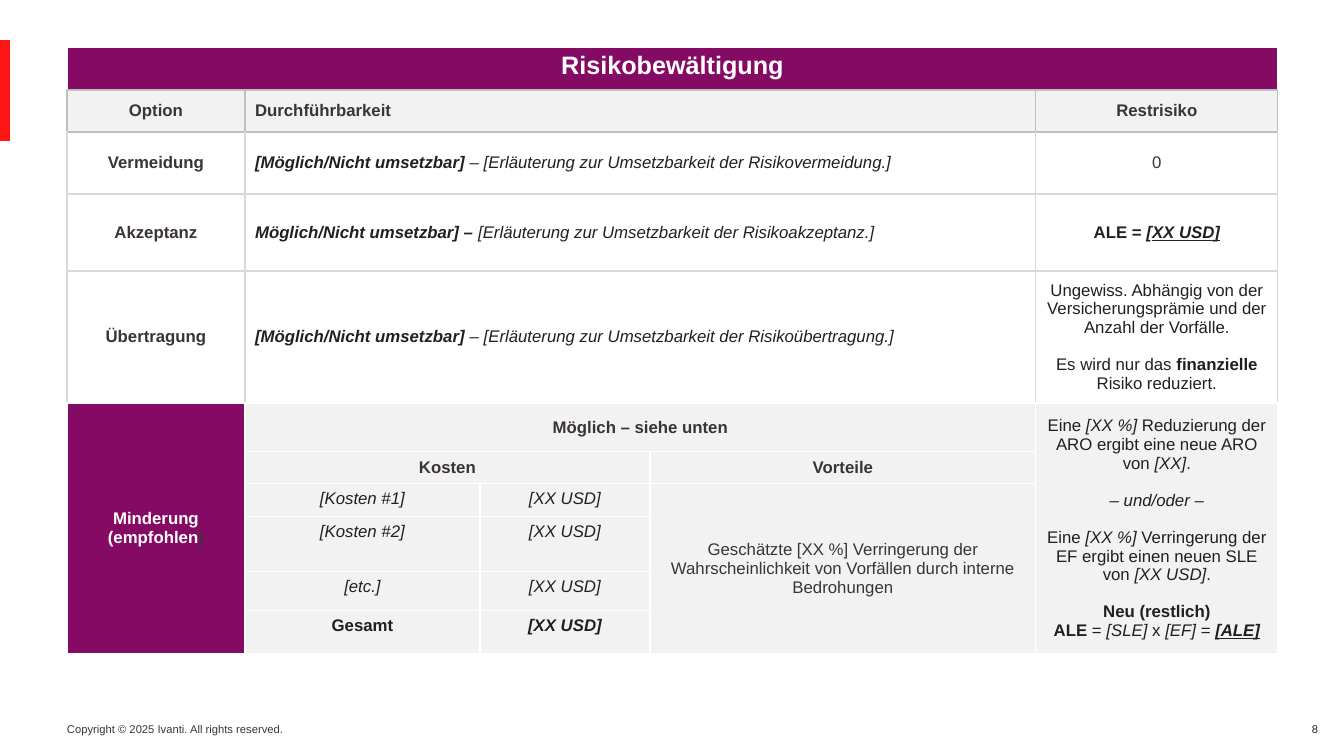
from lxml.etree import SubElement
from pptx import Presentation
from pptx.dml.color import RGBColor
from pptx.enum.shapes import MSO_SHAPE
from pptx.enum.text import MSO_ANCHOR, PP_ALIGN
from pptx.oxml.ns import qn
from pptx.util import Emu, Pt

PLUM, PALE, WHITE, RED = "850A64", "F2F2F2", "FFFFFF", "FF1515"
GREY, INK, MID, SOFT = "3B3436", "231F20", "BFBFBF", "D9D9D9"
COLS = [178, 235, 170, 386, 242]
ROWS = [43, 42, 62, 77, 132, 49, 32, 33, 55, 39, 43]
SIDES = [WHITE, MID] + [SOFT] * 3 + [WHITE] * 6
EDGES = [WHITE, MID, MID, SOFT, SOFT] + [WHITE] * 7
FILLS = [PLUM, PALE] + [WHITE] * 3 + [PALE] * 6
GAP = 13

COST = [("i", "[XX USD]")]
CUT = [
    (0, [("", "Eine "), ("i", "[XX %]"), ("", " Reduzierung der ARO ergibt eine neue ARO von "),
         ("i", "[XX]"), ("", ".")]),
    (GAP, [("i", "– und/oder –")]),
    (GAP, [("", "Eine "), ("i", "[XX %]"), ("", " Verringerung der EF ergibt einen neuen SLE von "),
           ("i", "[XX USD]"), ("", ".")]),
    (GAP, [("b", "Neu (restlich)")]),
    (0, [("b", "ALE"), ("", " = "), ("i", "[SLE]"), ("", " x "), ("i", "[EF]"),
         ("i", " = "), ("biu", "[ALE]")]),
]
MOVE = [
    (0, [("", "Ungewiss. Abhängig von der Versicherungsprämie und der Anzahl der Vorfälle.")]),
    (GAP, [("", "Es wird nur das "), ("b", "finanzielle"), ("", " Risiko reduziert.")]),
]
# row, column, rows spanned, columns spanned, colour, paragraphs
CELLS = [
    (0, 0, 1, 5, WHITE, [(0, [("b", "Risikobewältigung")])]),
    (1, 0, 1, 1, GREY, [(0, [("b", "Option")])]),
    (1, 1, 1, 3, GREY, [(0, [("b", "Durchführbarkeit")])]),
    (1, 4, 1, 1, GREY, [(0, [("b", "Restrisiko")])]),
    (2, 0, 1, 1, GREY, [(0, [("b", "Vermeidung")])]),
    (2, 1, 1, 3, INK, [(0, [("bi", "[Möglich/Nicht umsetzbar]"),
                            ("i", " – [Erläuterung zur Umsetzbarkeit der Risikovermeidung.]")])]),
    (2, 4, 1, 1, GREY, [(0, [("", "0")])]),
    (3, 0, 1, 1, GREY, [(0, [("b", "Akzeptanz")])]),
    (3, 1, 1, 3, INK, [(0, [("bi", "Möglich/Nicht umsetzbar] – "),
                            ("i", "[Erläuterung zur Umsetzbarkeit der Risikoakzeptanz.]")])]),
    (3, 4, 1, 1, INK, [(0, [("b", "ALE = "), ("bi", "["), ("biu", "XX USD]")])]),
    (4, 0, 1, 1, GREY, [(0, [("b", "Übertragung")])]),
    (4, 1, 1, 3, INK, [(0, [("bi", "[Möglich/Nicht umsetzbar] "),
                            ("i", "– [Erläuterung zur Umsetzbarkeit der Risikoübertragung.]")])]),
    (4, 4, 1, 1, INK, MOVE),
    (5, 0, 6, 1, WHITE, [(0, [("b", "Minderung (empfohlen"), ("b", ")", GREY)])]),
    (5, 1, 1, 3, GREY, [(0, [("b", "Möglich – siehe unten")])]),
    (5, 4, 6, 1, INK, CUT),
    (6, 1, 1, 2, GREY, [(0, [("b", "Kosten")])]),
    (6, 3, 1, 1, GREY, [(0, [("b", "Vorteile")])]),
    (7, 1, 1, 1, INK, [(0, [("i", "[Kosten #1]")])]),
    (7, 2, 1, 1, INK, [(0, COST)]),
    (7, 3, 4, 1, GREY, [(0, [("", "Geschätzte [XX %] Verringerung der Wahrscheinlichkeit "
                                  "von Vorfällen durch interne Bedrohungen")])]),
    (8, 1, 1, 1, INK, [(0, [("i", "[Kosten #2]")])]),
    (8, 2, 1, 1, INK, [(0, COST)]),
    (9, 1, 1, 1, INK, [(0, [("i", "[etc.]")])]),
    (9, 2, 1, 1, INK, [(0, COST)]),
    (10, 1, 1, 1, INK, [(0, [("b", "Gesamt")])]),
    (10, 2, 1, 1, INK, [(0, [("bi", "[XX USD]")])]),
]
NOTES = [
    (67, 717, 230, 24, PP_ALIGN.LEFT, GREY, "Copyright © 2025 Ivanti. All rights reserved."),
    (1279, 717, 49, 24, PP_ALIGN.RIGHT, INK, "8"),
]


def px(n):
    return Emu(round(n * 914400 / 100.8))


def paint(fill, tint):
    fill.solid()
    fill.fore_color.rgb = RGBColor.from_string(tint)


def write(para, text, size, tint, style=""):
    run = para.add_run()
    run.text = text
    font = run.font
    font.name, font.size = "Arial", Pt(size)
    font.bold, font.italic, font.underline = (key in style for key in "biu")
    font.color.rgb = RGBColor.from_string(tint)


def rule(cell, tints):
    props = cell._tc.get_or_add_tcPr()
    for spot, (side, tint) in enumerate(zip("LRTB", tints)):
        line = SubElement(props, qn("a:ln" + side), w=str(Pt(1)))
        solid = SubElement(line, qn("a:solidFill"))
        SubElement(solid, qn("a:srgbClr"), val=tint)
        props.insert(spot, line)


def fill_cell(grid, row, col, high, wide, tint, paras):
    cell = grid.cell(row, col)
    if high * wide > 1:
        cell.merge(grid.cell(row + high - 1, col + wide - 1))
    if (row, col) == (5, 0):
        paint(cell.fill, PLUM)
    rule(cell, (SIDES[row], SIDES[row], EDGES[row], EDGES[row + high]))
    top = row == 0 or (row > 6 and col in (1, 2))
    cell.vertical_anchor = MSO_ANCHOR.TOP if top else MSO_ANCHOR.MIDDLE
    left = col == 1 and row < 5
    frame = cell.text_frame
    for n, (gap, runs) in enumerate(paras):
        para = frame.add_paragraph() if n else frame.paragraphs[0]
        para.alignment = PP_ALIGN.LEFT if left else PP_ALIGN.CENTER
        if gap:
            para.space_before = Pt(gap)
        for style, text, *own in runs:
            write(para, text, 12 if row else 18, own[0] if own else tint, style)


def main():
    """Build the risk treatment slide."""
    deck = Presentation()
    deck.slide_width, deck.slide_height = px(1344), px(756)
    slide = deck.slides.add_slide(deck.slide_layouts[6])
    shapes = slide.shapes

    bar = shapes.add_shape(MSO_SHAPE.RECTANGLE, 0, px(40), px(10), px(101))
    bar.shadow.inherit = False
    paint(bar.fill, RED)
    bar.line.fill.background()

    for x, y, wide, high, align, tint, text in NOTES:
        frame = shapes.add_textbox(px(x), px(y), px(wide), px(high)).text_frame
        frame.word_wrap = True
        frame.margin_left = 0
        para = frame.paragraphs[0]
        para.alignment = align
        write(para, text, 8, tint)

    grid = shapes.add_table(len(ROWS), len(COLS), px(67), px(47),
                            px(sum(COLS)), px(sum(ROWS))).table
    grid.first_row = grid.horz_banding = False
    for col, wide in zip(grid.columns, COLS):
        col.width = px(wide)
    for row, high, tint in zip(grid.rows, ROWS, FILLS):
        row.height = px(high)
        for cell in row.cells:
            paint(cell.fill, tint)
    for item in CELLS:
        fill_cell(grid, *item)
    deck.save("out.pptx")


if __name__ == "__main__":
    main()
